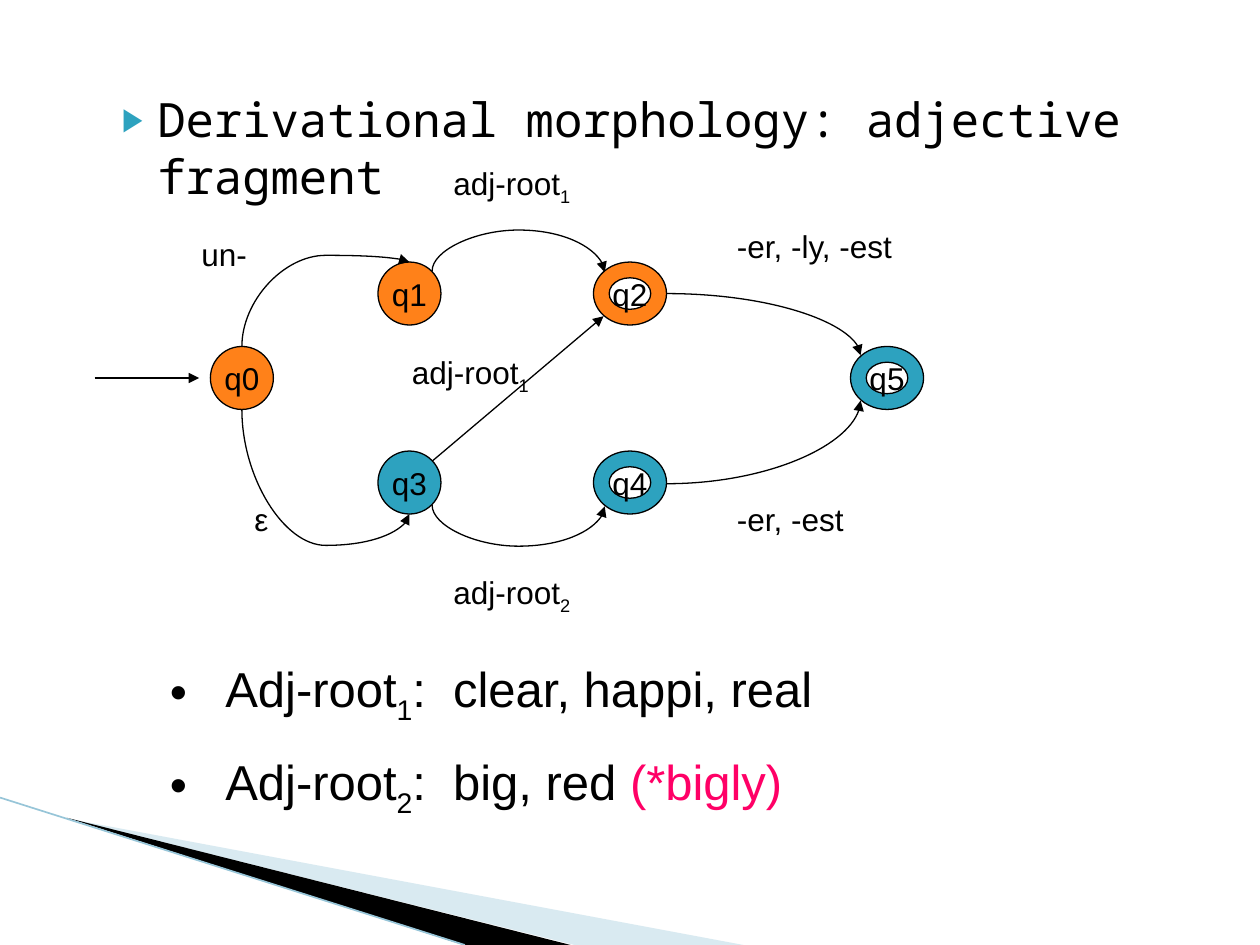
import pptx
import pptx.util
import pptx.dml.color
import pptx.enum.shapes
import pptx.enum.text
import pptx.oxml.ns
from lxml import etree

Inches, Pt = pptx.util.Inches, pptx.util.Pt
RGB = pptx.dml.color.RGBColor.from_string
SHAPE = pptx.enum.shapes.MSO_SHAPE
CONN = pptx.enum.shapes.MSO_CONNECTOR
qn = pptx.oxml.ns.qn

COLORS = {"black": "000000", "orange": "FF8119", "teal": "2DA2BF",
          "pale": "A0CBDC", "edge": "97C5D8", "pink": "FF0066"}

prs = pptx.Presentation()
prs.slide_width, prs.slide_height = Inches(10), Inches(7.5)
s = prs.slides.add_slide(prs.slide_layouts[6])


def add_line(kind, x1, y1, x2, y2, color="black", width=0.75, arrow=True):
    c = s.shapes.add_connector(kind, Inches(x1), Inches(y1), Inches(x2), Inches(y2))
    c.line.color.rgb = RGB(COLORS[color])
    c.line.width = Pt(width)
    if arrow:
        etree.SubElement(c.line._get_or_add_ln(), qn("a:tailEnd"), type="triangle")
    etree.SubElement(c._element.spPr, qn("a:effectLst"))
    return c


def add_runs(p, runs, size, font="Arial"):
    """Add (text, colour, is_subscript) runs to a paragraph."""
    for text, color, subscript in runs:
        r = p.add_run()
        r.text = text
        r.font.size, r.font.name = Pt(size), font
        r.font.color.rgb = RGB(COLORS[color])
        if subscript:
            r.font._element.set("baseline", "-25000")


# Corner decoration
wedges = [
    ("pale", [(0.55, 6.5), (5.9, 7.5), (4.56, 7.5)]),
    ("black", [(0.53, 6.49), (4.53, 7.5), (3.68, 7.5)]),
]
for color, points in wedges:
    pts = [(Inches(x), Inches(y)) for x, y in points]
    fb = s.shapes.build_freeform(*pts[0])
    fb.add_line_segments(pts[1:], close=True)
    sp = fb.convert_to_shape()
    sp.shadow.inherit = False
    sp.fill.solid()
    sp.fill.fore_color.rgb = RGB(COLORS[color])
    sp.line.fill.background()
    if color == "pale":
        clr = sp._element.spPr.find(".//" + qn("a:srgbClr"))
        etree.SubElement(clr, qn("a:alpha"), val="40000")
add_line(CONN.STRAIGHT, 0, 6.33, 3.69, 7.5, "edge", 0.95, arrow=False)

# Bulleted text: box, bullet, bullet colour, bullet size %, indent, font, size, paragraphs
lists = [
    ((0.75, 0.67, 8.5, 6), "▶", "teal", 68, (0.4, -0.28), "Noto Sans Mono", 27,
     [[("Derivational morphology: adjective fragment", "black", False)]]),
    ((1.25, 5.18, 7.5, 1.27), "•", "black", 100, (0.44, -0.44), "Arial", 28,
     [[("Adj-root", "black", False), ("1", "black", True),
       (":  clear, happi, real", "black", False)],
      [("Adj-root", "black", False), ("2", "black", True),
       (":  big, red ", "black", False), ("(*bigly)", "pink", False)]]),
]
for box, bullet, color, percent, (margin, indent), font, size, paragraphs in lists:
    tf = s.shapes.add_textbox(*map(Inches, box)).text_frame
    tf.word_wrap = True
    for i, runs in enumerate(paragraphs):
        p = tf.paragraphs[0] if i == 0 else tf.add_paragraph()
        pPr = p._p.get_or_add_pPr()
        pPr.set("marL", str(Inches(margin)))
        pPr.set("indent", str(Inches(indent)))
        bu_clr = etree.SubElement(pPr, qn("a:buClr"))
        etree.SubElement(bu_clr, qn("a:srgbClr"), val=COLORS[color])
        etree.SubElement(pPr, qn("a:buSzPct"), val=str(percent * 1000))
        etree.SubElement(pPr, qn("a:buFont"), typeface="Arial")
        etree.SubElement(pPr, qn("a:buChar"), char=bullet)
        if i:
            p.space_before = Pt(15)
        add_runs(p, runs, size, font)

# States: final ones are rings
states = [
    ("q0", 1.67, 2.75, "orange", False), ("q1", 3, 2.08, "orange", False),
    ("q2", 4.71, 2.08, "orange", True), ("q3", 3, 3.58, "teal", False),
    ("q4", 4.71, 3.58, "teal", True), ("q5", 6.75, 2.75, "teal", True),
]
for name, x, y, color, final in states:
    kind = SHAPE.DONUT if final else SHAPE.FLOWCHART_CONNECTOR
    sp = s.shapes.add_shape(kind, Inches(x), Inches(y),
                            Inches(0.58 if final else 0.5), Inches(0.5))
    sp.shadow.inherit = False
    sp.fill.solid()
    sp.fill.fore_color.rgb = RGB(COLORS[color])
    sp.line.color.rgb = RGB(COLORS["black"])
    sp.line.width = Pt(0.75)
    tf = sp.text_frame
    tf.word_wrap = False
    tf.vertical_anchor = pptx.enum.text.MSO_ANCHOR.MIDDLE
    p = tf.paragraphs[0]
    p.alignment = pptx.enum.text.PP_ALIGN.CENTER
    add_runs(p, [(name, "black", False)], 18)

# Straight arrows: into q0, and q3 to q2
add_line(CONN.STRAIGHT, 0.75, 3, 1.58, 3)
add_line(CONN.STRAIGHT, 3.43, 3.66, 4.79, 2.51)

# Curved arrows: left, top, width, height, rotation, flip, bend (None: a single quarter turn)
curves = [
    (2.17, 3, 0.83, 1.33, 270, "flipH", 1.3),       # q0 to q3
    (2.25, 1.75, 0.67, 1.33, 270, None, 1.08),      # q0 to q1
    (4.11, 1.47, 0.01, 1.37, 90, "flipV", -33),     # q1 to q2
    (4.11, 3.33, 0.01, 1.37, 270, "flipH", 33),     # q3 to q4
    (5.29, 2.33, 1.54, 0.49, 0, None, None),        # q2 to q5
    (5.29, 3.18, 1.54, 0.66, 0, "flipV", None),     # q4 to q5
]
for x, y, w, h, rotation, flip, bend in curves:
    spPr = add_line(CONN.CURVE, x, y, x + w, y + h)._element.spPr
    xfrm, geom = spPr.find(qn("a:xfrm")), spPr.find(qn("a:prstGeom"))
    xfrm.set("rot", str(rotation * 60000))
    if flip:
        xfrm.set(flip, "1")
    if bend is None:
        geom.set("prst", "curvedConnector2")
    else:
        etree.SubElement(geom.find(qn("a:avLst")), qn("a:gd"),
                         name="adj1", fmla=f"val {round(bend * 100000)}")

# Arc labels: text, subscript, left, top, width
labels = [
    ("un-", "", 1.5, 1.82, 0.92), ("adj-root", "1", 3.5, 1.25, 1.5),
    ("-er, -ly, -est", "", 5.75, 1.75, 2.33), ("ε", "", 1.92, 3.92, 0.42),
    ("adj-root", "1", 3.17, 2.75, 1.42), ("adj-root", "2", 3.5, 4.5, 1.58),
    ("-er, -est", "", 5.75, 3.92, 1.5),
]
for text, sub, x, y, w in labels:
    tf = s.shapes.add_textbox(Inches(x), Inches(y), Inches(w), Inches(0.5)).text_frame
    tf.word_wrap = True
    runs = [(text, "black", False)]
    if sub:
        runs.append((sub, "black", True))
    add_runs(tf.paragraphs[0], runs, 18)

prs.save("out.pptx")
